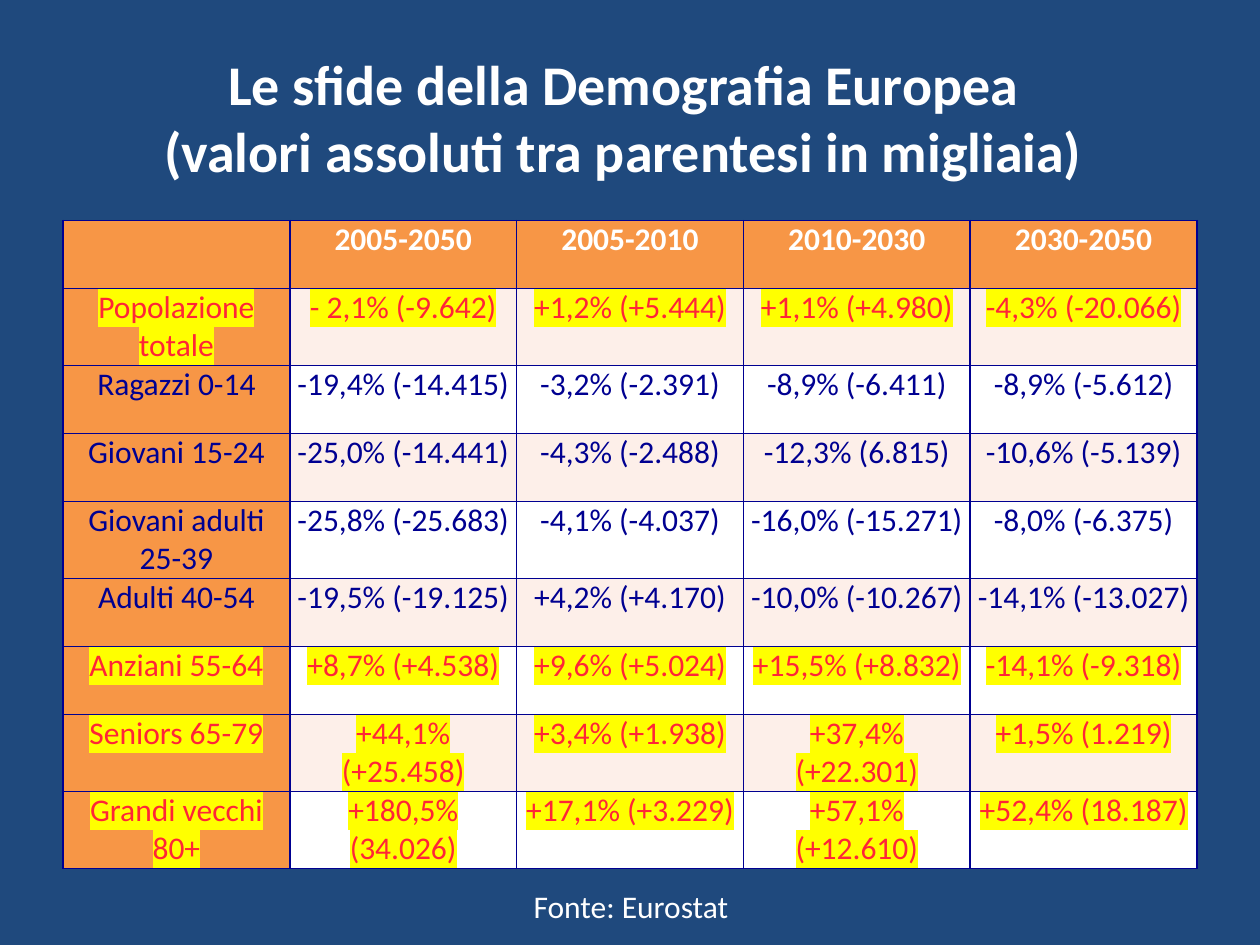
from dataclasses import dataclass

from lxml.etree import SubElement
from pptx import Presentation
from pptx.dml.color import RGBColor
from pptx.enum.text import MSO_ANCHOR, PP_ALIGN
from pptx.oxml import parse_xml
from pptx.oxml.ns import nsdecls, qn
from pptx.util import Inches, Pt


@dataclass(frozen=True)
class Theme:
    font: str = "Calibri"
    title_size: int = 32
    text_size: int = 18
    background: str = "1F497D"
    light_text: str = "FFFFFF"
    dark_text: str = "000091"
    alert_text: str = "FF2537"
    highlight: str = "FFFF00"
    accent_fill: str = "F79646"
    band_fills: tuple[str, str] = ("FDEFE9", "FFFFFF")
    border: str = "000091"
    border_width: int = 1


@dataclass(frozen=True)
class AgeGroup:
    label: str
    changes: tuple[str, ...]
    highlighted: bool = False


THEME = Theme()
PERIODS = ("2005-2050", "2005-2010", "2010-2030", "2030-2050")
AGE_GROUPS = (
    AgeGroup("Popolazione totale",
             ("- 2,1% (-9.642)", "+1,2% (+5.444)", "+1,1% (+4.980)", "-4,3% (-20.066)"), True),
    AgeGroup("Ragazzi 0-14",
             ("-19,4% (-14.415)", "-3,2% (-2.391)", "-8,9% (-6.411)", "-8,9% (-5.612)")),
    AgeGroup("Giovani 15-24",
             ("-25,0% (-14.441)", "-4,3% (-2.488)", "-12,3% (6.815)", "-10,6% (-5.139)")),
    AgeGroup("Giovani adulti 25-39",
             ("-25,8% (-25.683)", "-4,1% (-4.037)", "-16,0% (-15.271)", "-8,0% (-6.375)")),
    AgeGroup("Adulti 40-54",
             ("-19,5% (-19.125)", "+4,2% (+4.170)", "-10,0% (-10.267)", "-14,1% (-13.027)")),
    AgeGroup("Anziani 55-64",
             ("+8,7% (+4.538)", "+9,6% (+5.024)", "+15,5% (+8.832)", "-14,1% (-9.318)"), True),
    AgeGroup("Seniors 65-79",
             ("+44,1% (+25.458)", "+3,4% (+1.938)", "+37,4% (+22.301)", "+1,5% (1.219)"), True),
    AgeGroup("Grandi vecchi 80+",
             ("+180,5% (34.026)", "+17,1% (+3.229)", "+57,1% (+12.610)", "+52,4% (18.187)"), True),
)


def format_runs(paragraph, color: str, size: int = THEME.text_size, bold: bool = False,
                highlighted: bool = False) -> None:
    for run in paragraph.runs:
        font = run.font
        font.name, font.size, font.bold = THEME.font, Pt(size), bold
        font.color.rgb = RGBColor.from_string(color)
        if highlighted:
            highlight = parse_xml(
                f'<a:highlight {nsdecls("a")}><a:srgbClr val="{THEME.highlight}"/></a:highlight>')
            # The schema wants the highlight right after the text fill
            run._r.get_or_add_rPr().find(qn("a:solidFill")).addnext(highlight)


def add_borders(cell) -> None:
    properties = cell._tc.get_or_add_tcPr()
    for index, side in enumerate(("lnL", "lnR", "lnT", "lnB")):
        line = parse_xml(f'<a:{side} {nsdecls("a")} w="{Pt(THEME.border_width)}"/>')
        fill = SubElement(line, qn("a:solidFill"))
        SubElement(fill, qn("a:srgbClr"), val=THEME.border)
        properties.insert(index, line)


def fill_cell(cell, text: str, fill: str, color: str, bold: bool = False,
              highlighted: bool = False) -> None:
    cell.fill.solid()
    cell.fill.fore_color.rgb = RGBColor.from_string(fill)
    add_borders(cell)
    if not text:
        return
    cell.margin_left = cell.margin_right = Inches(0.05)
    cell.margin_top = cell.margin_bottom = 0
    cell.text_frame.text = text
    paragraph = cell.text_frame.paragraphs[0]
    paragraph.alignment = PP_ALIGN.CENTER
    paragraph.space_before = Pt(1)
    format_runs(paragraph, color, bold=bold, highlighted=highlighted)


def add_title(slide) -> None:
    title = slide.shapes.title
    title.left, title.top = Inches(0.5), Inches(0.3)
    title.width, title.height = Inches(9), Inches(1.25)
    text_frame = title.text_frame
    text_frame.vertical_anchor = MSO_ANCHOR.MIDDLE
    text_frame.text = "Le sfide della Demografia Europea \v(valori assoluti tra parentesi in migliaia) "
    paragraph = text_frame.paragraphs[0]
    paragraph.alignment = PP_ALIGN.CENTER
    format_runs(paragraph, THEME.light_text, THEME.title_size, bold=True)


def add_population_table(slide) -> None:
    row_count, column_count = len(AGE_GROUPS) + 1, len(PERIODS) + 1
    table = slide.shapes.add_table(row_count, column_count, Inches(0.5), Inches(1.75),
                                   Inches(9), Inches(0.54 * row_count)).table
    # Header row
    for column, text in enumerate(("", *PERIODS)):
        fill_cell(table.cell(0, column), text, THEME.accent_fill, THEME.light_text, bold=True)
    # One row for each age group, with alternating bands
    for row, group in enumerate(AGE_GROUPS, start=1):
        color = THEME.alert_text if group.highlighted else THEME.dark_text
        band = THEME.band_fills[(row - 1) % 2]
        for column, text in enumerate((group.label, *group.changes)):
            fill = band if column else THEME.accent_fill
            fill_cell(table.cell(row, column), text, fill, color, highlighted=group.highlighted)


def add_source_note(slide) -> None:
    note = slide.shapes.add_textbox(Inches(4.08), Inches(6.99), Inches(1.84), Inches(0.4))
    note.text_frame.word_wrap = False
    note.text_frame.text = " Fonte: Eurostat"
    format_runs(note.text_frame.paragraphs[0], THEME.light_text)


def main() -> None:
    presentation = Presentation()
    presentation.slide_width, presentation.slide_height = Inches(10), Inches(7.5)
    slide = presentation.slides.add_slide(presentation.slide_layouts[5])
    slide.background.fill.solid()
    slide.background.fill.fore_color.rgb = RGBColor.from_string(THEME.background)
    add_title(slide)
    add_population_table(slide)
    add_source_note(slide)
    presentation.save("out.pptx")


if __name__ == "__main__":
    main()
